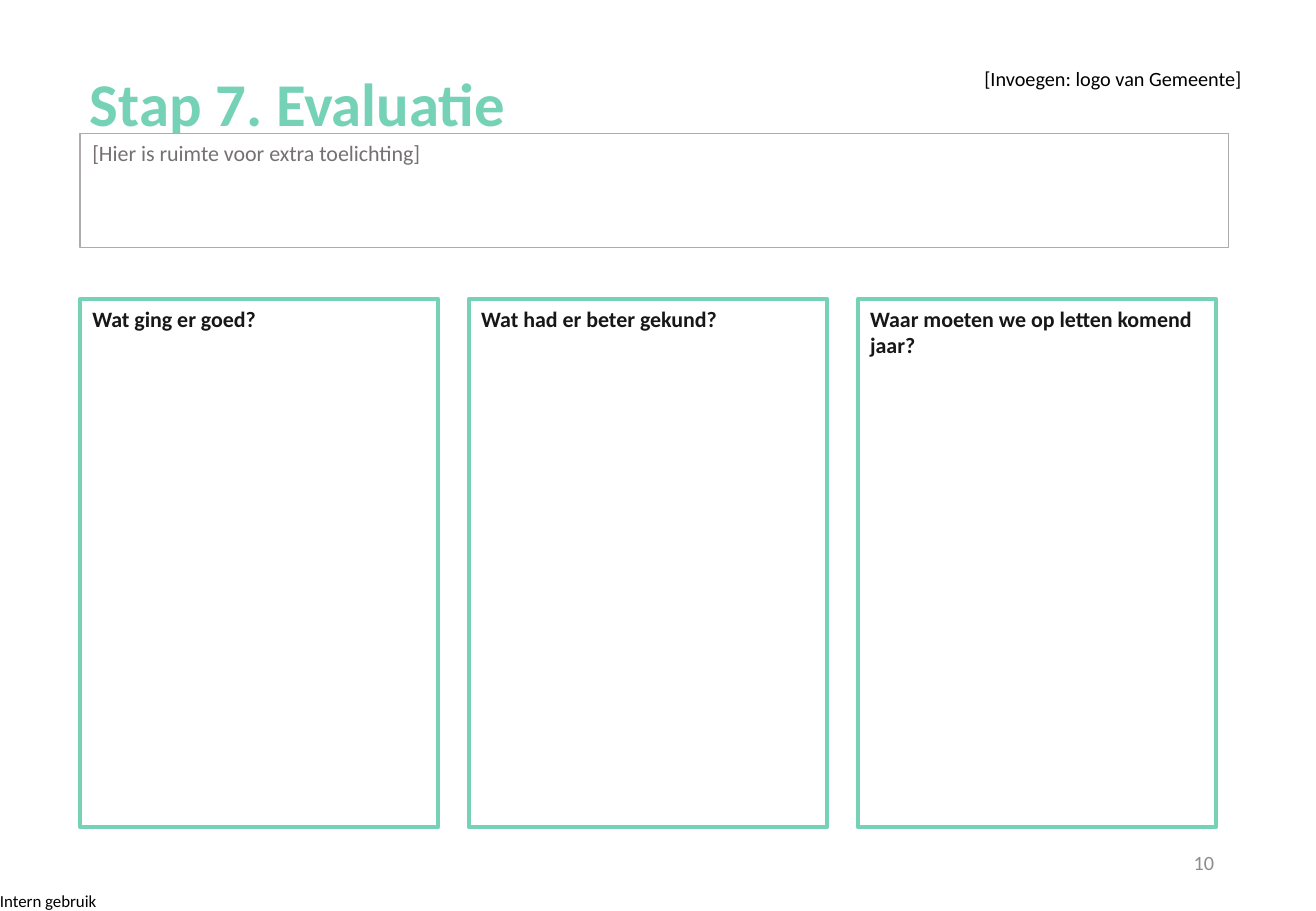
from pptx import Presentation
from pptx.dml.color import RGBColor
from pptx.enum.shapes import MSO_SHAPE
from pptx.enum.text import MSO_ANCHOR, MSO_AUTO_SIZE, PP_ALIGN
from pptx.util import Cm, Pt

MINT = "76D2B6"
LEFT = 1.68
CARD_STEP = 8.13
QUESTIONS = [
    "Wat ging er goed?",
    "Wat had er beter gekund?",
    "Waar moeten we op letten komend jaar?",
]


def colour(value):
    """Turn a hex string into a colour."""
    return RGBColor.from_string(value)


class EvaluationPage:
    """Holds the style and the current slide."""

    font = "Calibri"

    def __init__(self, deck):
        """Add a title-only slide to the deck."""
        self.page = deck.slides.add_slide(deck.slide_layouts[5])

    def set_text(self, box, text, size, ink, bold=False, align=PP_ALIGN.LEFT,
                 anchor=MSO_ANCHOR.TOP, margins=(0.25, 0.13)):
        """Put one formatted paragraph into a box."""
        frame = box.text_frame
        frame.text = text
        frame.word_wrap = True
        frame.auto_size = MSO_AUTO_SIZE.NONE
        frame.vertical_anchor = anchor
        frame.margin_left = frame.margin_right = Cm(margins[0])
        frame.margin_top = frame.margin_bottom = Cm(margins[1])
        para = frame.paragraphs[0]
        para.alignment = align
        font = para.runs[0].font
        font.name, font.size, font.bold = self.font, Pt(size), bold
        font.color.rgb = colour(ink)
        return para

    def title(self, text, left, top, width, height):
        """Place and format the title placeholder."""
        box = self.page.shapes.title
        box.left, box.top, box.width, box.height = map(Cm, (left, top, width, height))
        para = self.set_text(box, text, 36, MINT, bold=True,
                             anchor=MSO_ANCHOR.BOTTOM, margins=(0.2, 0.1))
        para.line_spacing = 0.9

    def panel(self, text, place, size, ink, fill=None, line=None, weight=1, **style):
        """Draw a rectangle with text."""
        box = self.page.shapes.add_shape(MSO_SHAPE.RECTANGLE, *map(Cm, place))
        box.shadow.inherit = False
        if fill:
            box.fill.solid()
            box.fill.fore_color.rgb = colour(fill)
        else:
            box.fill.background()
        if line:
            box.line.color.rgb = colour(line)
            box.line.width = Pt(weight)
        else:
            box.line.fill.background()
        self.set_text(box, text, size, ink, **style)

    def label(self, text, place, size, ink, **style):
        """Add a plain text box."""
        box = self.page.shapes.add_textbox(*map(Cm, place))
        self.set_text(box, text, size, ink, **style)


def main():
    """Build and save the evaluation slide."""
    deck = Presentation()
    deck.slide_width, deck.slide_height = Cm(27.51), Cm(19.05)
    evaluation = EvaluationPage(deck)
    evaluation.label("Intern gebruik", (0, 18.62, 2.11, 0.43), 10, "000000",
                     margins=(0, 0))
    for index, question in enumerate(QUESTIONS):
        evaluation.panel(question, (LEFT + index * CARD_STEP, 6.25, 7.48, 11.05),
                         13, "181717", line=MINT, weight=2.25, bold=True)
    evaluation.title("Stap 7. Evaluatie", LEFT, 0.48, 25.63, 2.54)
    evaluation.label("10", (19.43, 17.53, 6.2, 1.02), 12, "8C8C8C",
                     align=PP_ALIGN.RIGHT, anchor=MSO_ANCHOR.MIDDLE)
    evaluation.panel("[Invoegen: logo van Gemeente]", (20.17, 0.74, 6.2, 1.8),
                     12, "000000", fill="FFFFFF", align=PP_ALIGN.CENTER,
                     anchor=MSO_ANCHOR.MIDDLE)
    evaluation.panel("[Hier is ruimte voor extra toelichting]",
                     (LEFT, 2.79, 24, 2.39), 13, "767171",
                     fill="FFFFFF", line="AFABAB")
    deck.save("out.pptx")


if __name__ == "__main__":
    main()
